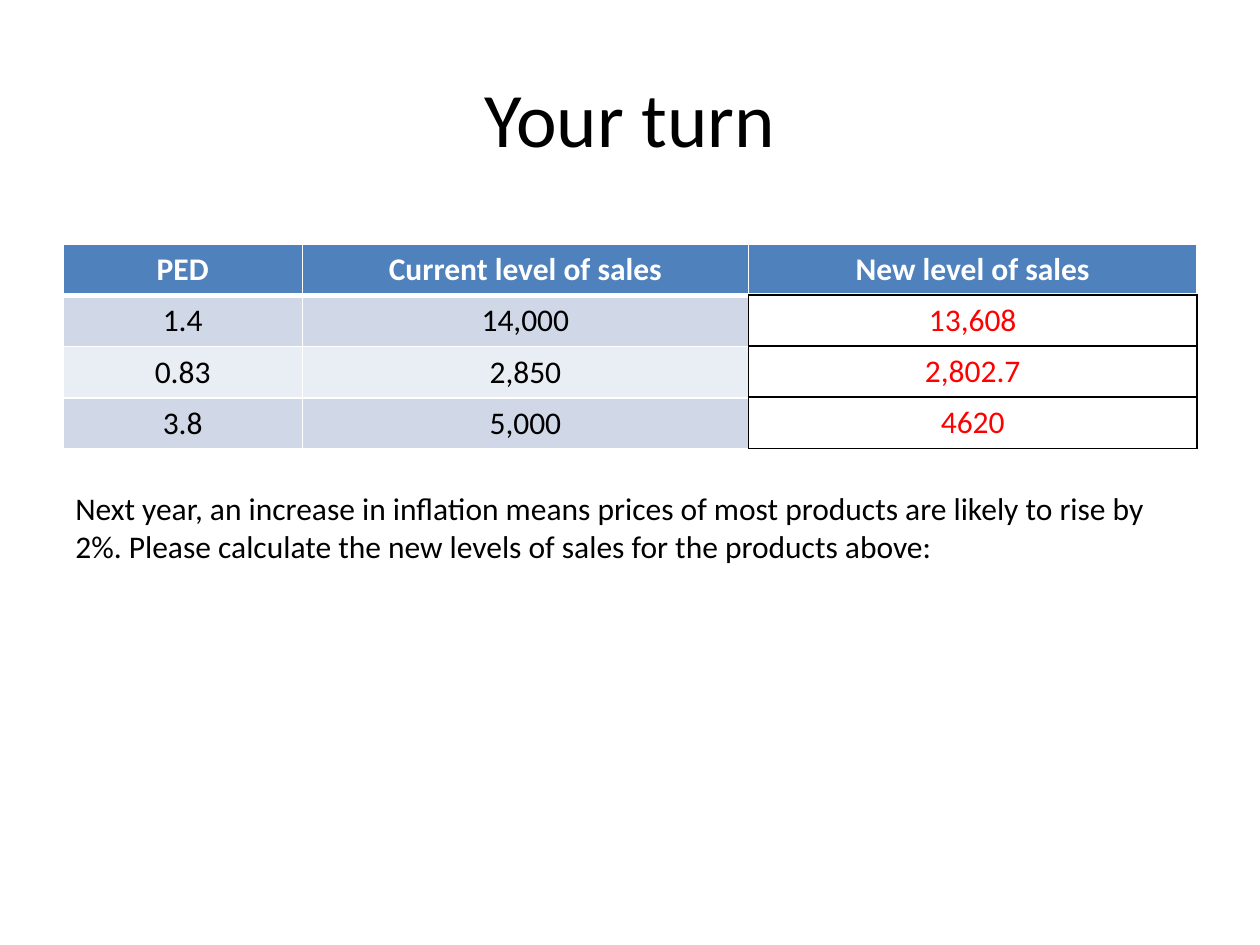
from lxml import etree
from pptx import Presentation
from pptx.dml.color import RGBColor
from pptx.enum.text import MSO_ANCHOR, PP_ALIGN
from pptx.oxml.ns import qn
from pptx.util import Inches, Pt

CENTER, LEFT = PP_ALIGN.CENTER, PP_ALIGN.LEFT
MIDDLE = MSO_ANCHOR.MIDDLE
WHITE, BLACK, RED = "FFFFFF", "000000", "FF0000"
HEADER_FILL, BANDS = "4F81BD", ("D0D8E8", "E9EDF4")

SLIDE_WIDTH, SLIDE_HEIGHT = 10, 7.5
MARGIN = SLIDE_WIDTH * 0.05
CONTENT_WIDTH = SLIDE_WIDTH - 2 * MARGIN
ROW_HEIGHT = 0.406
COLUMNS = (1.9, 3.54, 3.56)
TABLE_TOP = 1.94
ANSWERS_TOP = TABLE_TOP + 0.4

sales_rows = [
    ("PED", "Current level of sales", "New level of sales"),
    ("1.4", "14,000", ""),
    ("0.83", "2,850", ""),
    ("3.8", "5,000", ""),
]
answer_rows = [("13,608",), ("2,802.7",), ("4620",)]


def write(text_frame, text, size=18, color=BLACK, bold=False, align=LEFT):
    paragraph = text_frame.paragraphs[0]
    paragraph.alignment = align
    run = paragraph.add_run()
    run.text = text
    run.font.name = "Calibri"
    run.font.size = Pt(size)
    run.font.bold = bold
    run.font.color.rgb = RGBColor.from_string(color)


def format_cell(cell, fill, border, bottom_width=1):
    """Draw the four borders, then the fill, in the order the schema asks for."""
    properties = cell._tc.get_or_add_tcPr()
    for side, width in (("L", 1), ("R", 1), ("T", 1), ("B", bottom_width)):
        line = etree.SubElement(properties, qn(f"a:ln{side}"), w=str(Pt(width)))
        solid = etree.SubElement(line, qn("a:solidFill"))
        etree.SubElement(solid, qn("a:srgbClr"), val=border)
    cell.fill.solid()
    cell.fill.fore_color.rgb = RGBColor.from_string(fill)


presentation = Presentation()
presentation.slide_width = Inches(SLIDE_WIDTH)
presentation.slide_height = Inches(SLIDE_HEIGHT)
slide = presentation.slides.add_slide(presentation.slide_layouts[6])

# Title and question
question = ("Next year, an increase in inflation means prices of most products are likely "
            "to rise by 2%. Please calculate the new levels of sales for the products above:")
for text, top, height, size, align in (
    ("Your turn", SLIDE_HEIGHT * 0.04, 1.25, 44, CENTER),
    (question, 3.83, 0.71, 18, LEFT),
):
    box = slide.shapes.add_textbox(
        Inches(MARGIN), Inches(top), Inches(CONTENT_WIDTH), Inches(height))
    box.text_frame.word_wrap = True
    box.text_frame.vertical_anchor = MIDDLE if align == CENTER else MSO_ANCHOR.TOP
    write(box.text_frame, text, size=size, align=align)

# Sales table, with the answers as a second table over its last column
answers_left = MARGIN + sum(COLUMNS[:2])
for rows, columns, left, top, is_answers in (
    (sales_rows, COLUMNS, MARGIN, TABLE_TOP, False),
    (answer_rows, COLUMNS[2:], answers_left, ANSWERS_TOP, True),
):
    table = slide.shapes.add_table(
        len(rows), len(columns), Inches(left), Inches(top),
        Inches(sum(columns)), Inches(ROW_HEIGHT * len(rows))).table
    table.first_row = table.horz_banding = False
    for column, width in zip(table.columns, columns):
        column.width = Inches(width)
    for row_index, row in enumerate(rows):
        is_header = row_index == 0 and not is_answers
        table.rows[row_index].height = Inches(ROW_HEIGHT)
        if is_answers:
            fill, border, color = WHITE, BLACK, RED
        elif is_header:
            fill, border, color = HEADER_FILL, WHITE, WHITE
        else:
            fill, border, color = BANDS[(row_index - 1) % 2], WHITE, BLACK
        for column_index, text in enumerate(row):
            cell = table.cell(row_index, column_index)
            format_cell(cell, fill, border, bottom_width=3 if is_header else 1)
            if text:
                write(cell.text_frame, text, color=color, bold=is_header, align=CENTER)

presentation.save("out.pptx")
